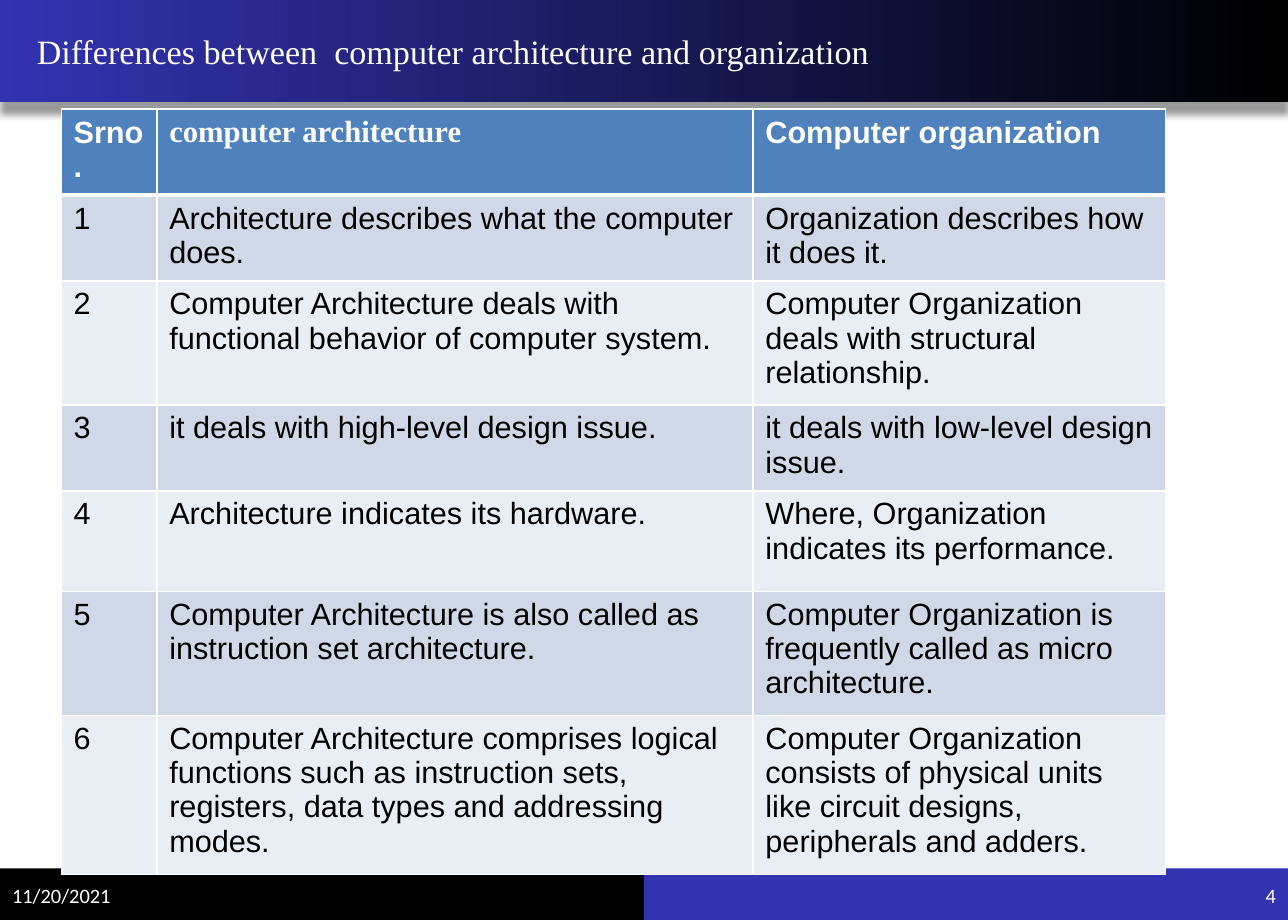
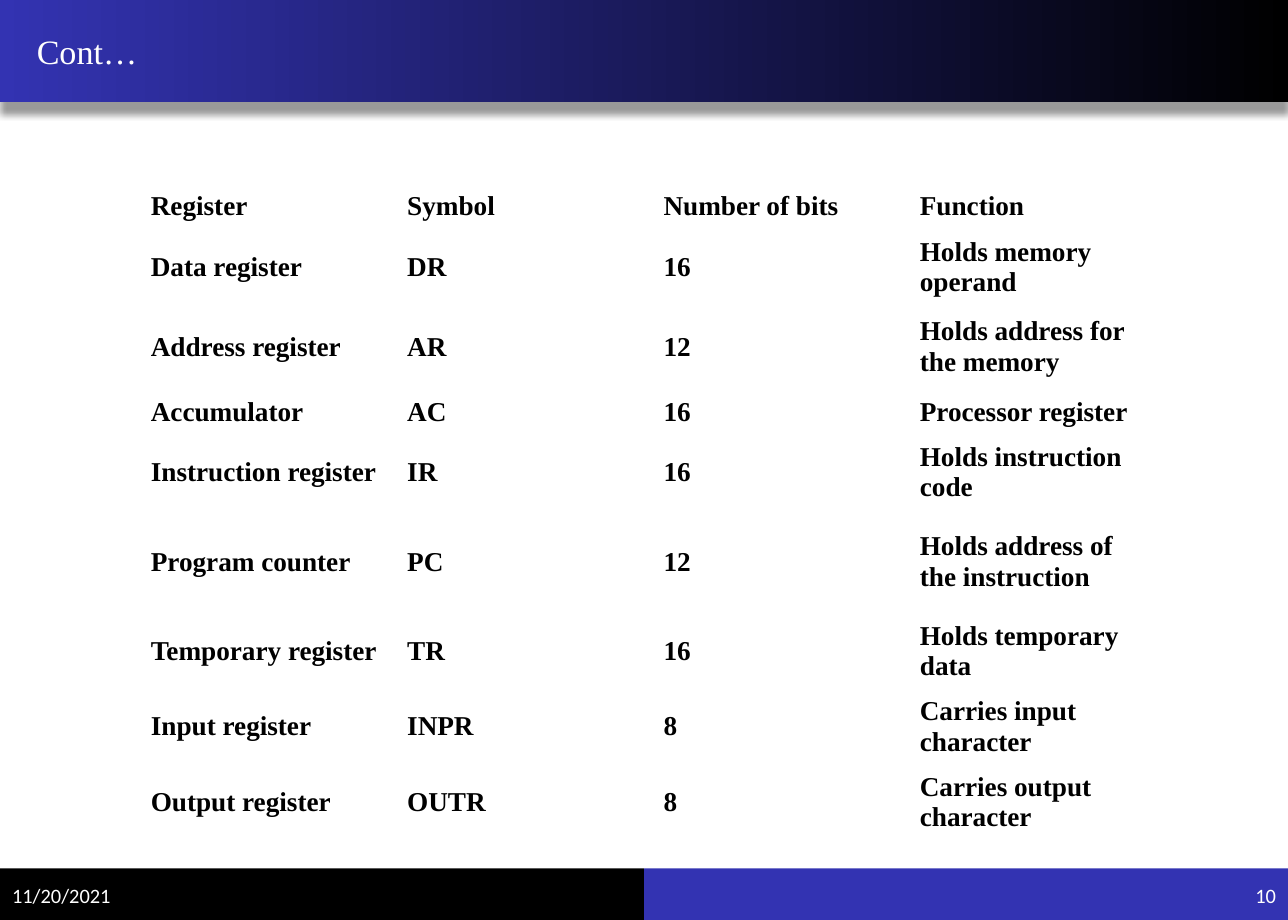
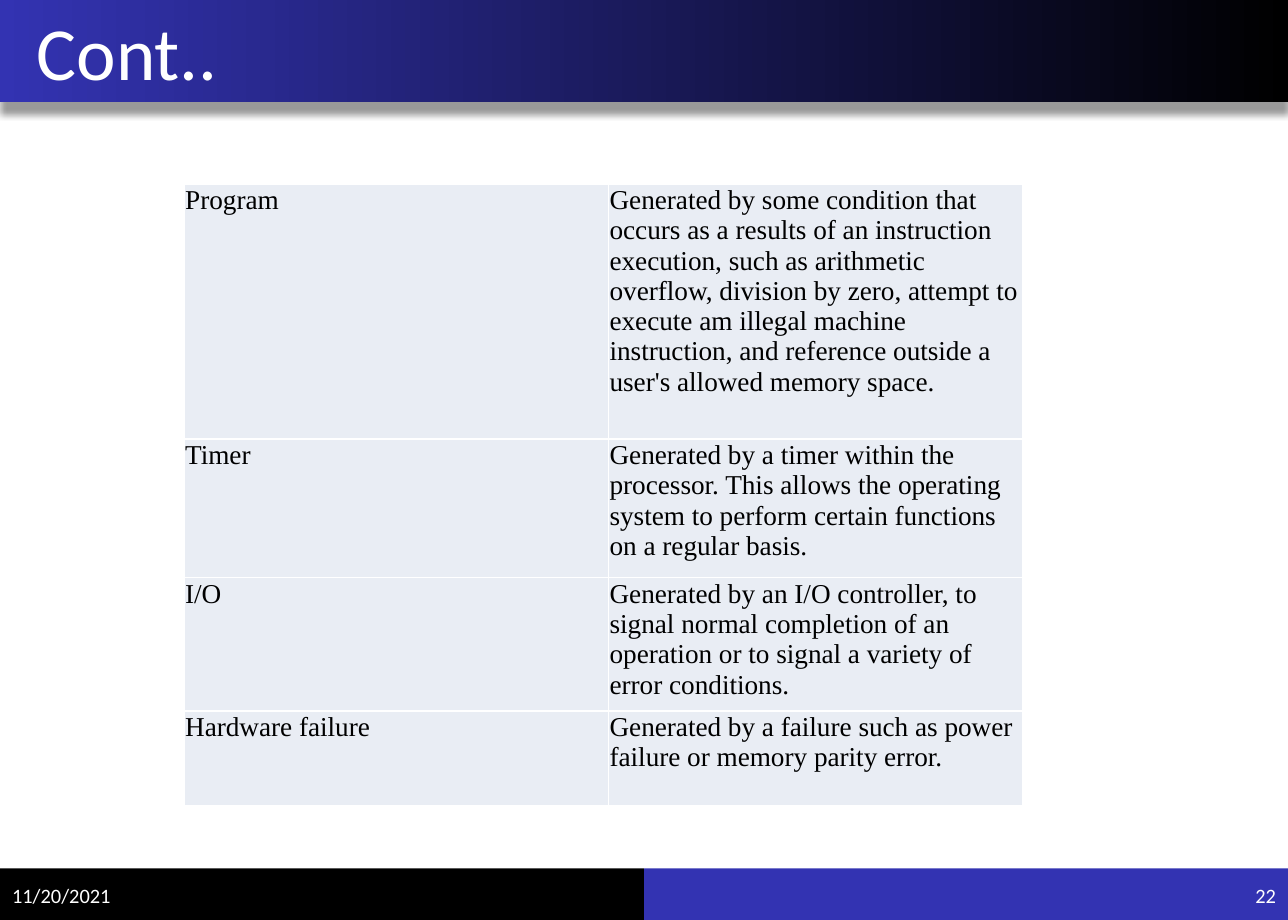
from lxml.etree import SubElement as Sub
from pptx import Presentation
from pptx.dml.color import RGBColor as RGB
from pptx.enum.shapes import MSO_SHAPE as Kind
from pptx.enum.text import MSO_ANCHOR as Anchor, PP_ALIGN as Align
from pptx.oxml import parse_xml
from pptx.oxml.ns import nsdecls, qn
from pptx.util import Pt

PX = 9144
WIDE, HIGH = 1050, 750
BLACK = RGB(0x00, 0x00, 0x00)
WHITE = RGB(0xFF, 0xFF, 0xFF)
BLUE = RGB(0x33, 0x33, 0xB2)
HEAD = RGB(0x4F, 0x81, 0xBD)
DARK = RGB(0xD0, 0xD8, 0xE8)
PALE = RGB(0xE9, 0xED, 0xF4)
SERIF, SANS, PLAIN = "Times New Roman", "Arial", "Calibri"
SIDES = ("margin_left", "margin_top", "margin_right", "margin_bottom")
SHADE = (
    f'<a:outerShdw {nsdecls("a")} blurRad="50800" dist="88900" dir="5400000" '
    'algn="t" rotWithShape="0"><a:srgbClr val="000000">'
    '<a:alpha val="40000"/></a:srgbClr></a:outerShdw>'
)

DECK = [
    {
        "title": "Differences between  computer architecture and organization",
        "look": {"name": SERIF, "size": Pt(20)},
        "page": "4",
        "at": (50, 89),
        "cols": [78, 486, 336],
        "rows": [33, 63, 101, 63, 82, 101, 106],
        "pad": (10, 5),
        "font": {"name": SANS, "size": Pt(18), "bold": False},
        "fills": [DARK, PALE],
        "head": HEAD,
        "anchor": Anchor.TOP,
        "cells": [
            ("Srno.", "computer architecture", "Computer organization"),
            ("1", "Architecture describes what the computer does.",
             "Organization describes how it does it."),
            ("2", "Computer Architecture deals with functional behavior of computer system.",
             "Computer Organization deals with structural relationship."),
            ("3", "it deals with high-level design issue.",
             "it deals with low-level design issue."),
            ("4", "Architecture indicates its hardware.",
             "Where, Organization indicates its performance."),
            ("5", "Computer Architecture is also called as instruction set architecture.",
             "Computer Organization is frequently called as micro architecture."),
            ("6", "Computer Architecture comprises logical functions such as instruction "
             "sets, registers, data types and addressing modes.",
             "Computer Organization consists of physical units like circuit designs, "
             "peripherals and adders."),
        ],
    },
    {
        "title": "Cont…",
        "look": {"name": SERIF, "size": Pt(20)},
        "page": "10",
        "at": (114, 150),
        "cols": [209] * 4,
        "rows": [37, 53, 69, 37, 53, 85, 53, 53, 53],
        "pad": (9, 4),
        "font": {"name": SERIF, "size": Pt(16), "bold": True},
        "fills": None,
        "head": None,
        "anchor": Anchor.MIDDLE,
        "cells": [
            ("Register", "Symbol", "Number of bits", "Function"),
            ("Data register", "DR", "16", "Holds memory operand"),
            ("Address register", "AR", "12", "Holds address for the memory"),
            ("Accumulator", "AC", "16", "Processor register"),
            ("Instruction register", "IR", "16", "Holds instruction code"),
            ("Program counter", "PC", "12", "Holds address of the instruction"),
            ("Temporary register", "TR", "16", "Holds temporary data"),
            ("Input register", "INPR", "8", "Carries input character"),
            ("Output register", "OUTR", "8", "Carries output character"),
        ],
    },
    {
        "title": "Cont..",
        "look": {"name": PLAIN, "size": Pt(44)},
        "page": "22",
        "at": (150, 150),
        "cols": [346, 338],
        "rows": [208, 113, 77, 77],
        "pad": (1, 1),
        "font": {"name": SERIF, "size": Pt(16), "bold": False},
        "fills": [PALE],
        "head": None,
        "anchor": Anchor.TOP,
        "cells": [
            ("Program", "Generated by some condition that occurs as a results of an "
             "instruction execution, such as arithmetic overflow, division by zero, "
             "attempt to execute am illegal machine instruction, and reference outside "
             "a user's allowed memory space."),
            ("Timer", "Generated by a timer within the processor. This allows the "
             "operating system to perform certain functions on a regular basis."),
            ("I/O", "Generated by an I/O controller, to signal normal completion of an "
             "operation or to signal a variety of error conditions."),
            ("Hardware failure", "Generated by a failure such as power failure or "
             "memory parity error."),
        ],
    },
]


def scale(*nums):
    return [num * PX for num in nums]


def write(frame, text, look, tint, align=Align.LEFT):
    para = frame.paragraphs[0]
    para.alignment = align
    run = para.add_run()
    run.text = text
    for key, val in look.items():
        setattr(run.font, key, val)
    run.font.color.rgb = tint


deck = Presentation()
deck.slide_width, deck.slide_height = scale(WIDE, HIGH)
small = {"name": PLAIN, "size": Pt(12)}

for page in DECK:
    slide = deck.slides.add_slide(deck.slide_layouts[6])

    for box, tint in [
        ((525, 708, 525, 42), BLUE),
        ((0, 708, 525, 42), BLACK),
        ((0, 0, WIDE, 83), None),
    ]:
        band = slide.shapes.add_shape(Kind.RECTANGLE, *scale(*box))
        band.shadow.inherit = False
        band.line.fill.background()
        if tint is not None:
            band.fill.solid()
            band.fill.fore_color.rgb = tint
            continue
        band.fill.gradient()
        band.fill.gradient_angle = 180
        for stop, shade in zip(band.fill.gradient_stops, (BLACK, BLUE)):
            stop.color.rgb = shade
        band._element.spPr.find(qn("a:effectLst")).append(parse_xml(SHADE))

    for box, text, look, left, align in [
        ((0, 0, 1024, 83), page["title"], page["look"], 30, Align.LEFT),
        ((0, 710, 123, 40), "11/20/2021", small, 10, Align.LEFT),
        ((928, 710, 122, 40), page["page"], small, 10, Align.RIGHT),
    ]:
        frame = slide.shapes.add_textbox(*scale(*box)).text_frame
        form = {"word_wrap": True, "vertical_anchor": Anchor.MIDDLE,
                "margin_left": left * PX}
        for key, val in form.items():
            setattr(frame, key, val)
        write(frame, text, look, WHITE, align)

    cols, rows, fills = page["cols"], page["rows"], page["fills"]
    box = scale(*page["at"], sum(cols), sum(rows))
    grid = slide.shapes.add_table(len(rows), len(cols), *box).table
    grid.horz_banding = False
    grid.first_row = page["head"] is not None
    for col, wide in zip(grid.columns, cols):
        col.width = wide * PX
    for row, high in zip(grid.rows, rows):
        row.height = high * PX

    form = dict(zip(SIDES, scale(*page["pad"] * 2)))
    form["vertical_anchor"] = page["anchor"]
    for i, line in enumerate(page["cells"]):
        top = i == 0 and page["head"] is not None
        for j, text in enumerate(line):
            cell = grid.cell(i, j)
            for key, val in form.items():
                setattr(cell, key, val)
            props = cell._tc.get_or_add_tcPr()
            for edge in ("lnL", "lnR", "lnT", "lnB"):
                thick = page["head"] is not None and (i, edge) in [(0, "lnB"), (1, "lnT")]
                rule = Sub(props, qn("a:" + edge), w=str(Pt(3 if thick else 1)))
                if fills:
                    Sub(Sub(rule, qn("a:solidFill")), qn("a:srgbClr"), val=str(WHITE))
                else:
                    Sub(rule, qn("a:noFill"))
            if fills:
                cell.fill.solid()
                cell.fill.fore_color.rgb = page["head"] if top else fills[(i - 1) % len(fills)]
            else:
                cell.fill.background()
            look = dict(page["font"])
            if top:
                look.update(bold=True, name=SERIF if j == 1 else SANS)
            write(cell.text_frame, text, look, WHITE if top else BLACK)

deck.save("out.pptx")
